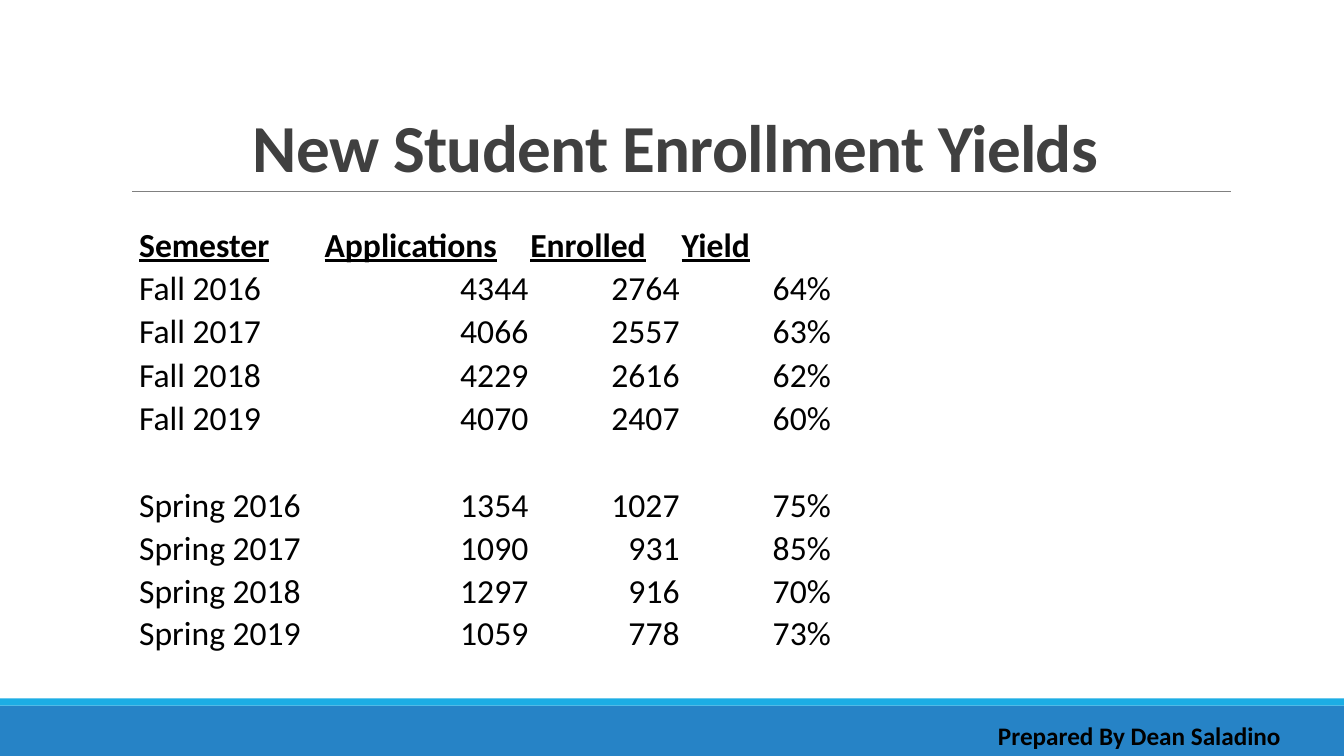
from pptx import Presentation
from pptx.dml.color import RGBColor
from pptx.enum.shapes import MSO_CONNECTOR, MSO_SHAPE
from pptx.enum.text import MSO_ANCHOR, MSO_AUTO_SIZE, PP_ALIGN
from pptx.oxml.ns import qn
from pptx.util import Inches, Pt
from lxml.etree import SubElement

TITLE = "New Student Enrollment Yields"
CREDIT = "Prepared By Dean Saladino"
HEADER = ("Semester", "Applications", "Enrolled", "Yield")
FALL = [
    ("Fall 2016", "4344", "2764", "64%"),
    ("Fall 2017", "4066", "2557", "63%"),
    ("Fall 2018", "4229", "2616", "62%"),
    ("Fall 2019", "4070", "2407", "60%"),
]
SPRING = [
    ("Spring 2016", "1354", "1027", "75%"),
    ("Spring 2017", "1090", "931", "85%"),
    ("Spring 2018", "1297", "916", "70%"),
    ("Spring 2019", "1059", "778", "73%"),
]
ROWS = [HEADER, *FALL, (), *SPRING]
COLUMN_WIDTHS = (1.84, 2.04, 1.5, 1.5, 1.5, 1.5)
ROW_HEIGHT, LAST_ROW_HEIGHT = 0.43, 0.31
MERGED_ROWS = (0, len(FALL), len(ROWS) - 1)

BLUE = RGBColor(0x26, 0x83, 0xC6)
CYAN = RGBColor(0x1C, 0xAD, 0xE4)
GRAY = RGBColor(0x80, 0x80, 0x80)
DARK_GRAY = RGBColor(0x40, 0x40, 0x40)
BLACK = RGBColor(0, 0, 0)


def write_text(frame, text, size=24, color=BLACK, bold=False, underline=False,
               align=PP_ALIGN.LEFT):
    paragraph = frame.paragraphs[0]
    paragraph.alignment = align
    run = paragraph.add_run()
    run.text = text
    font = run.font
    font.name, font.size, font.bold, font.underline = "Calibri", Pt(size), bold, underline
    font.color.rgb = color
    return paragraph


def add_bar(slide, top, height, color):
    bar = slide.shapes.add_shape(MSO_SHAPE.RECTANGLE, 0, Inches(top), Inches(13.33), Inches(height))
    bar.shadow.inherit = False
    bar.fill.solid()
    bar.fill.fore_color.rgb = color
    bar.line.fill.background()


def add_title_rule(slide):
    rule = slide.shapes.add_connector(
        MSO_CONNECTOR.STRAIGHT, Inches(1.31), Inches(1.9), Inches(12.21), Inches(1.9))
    rule.line.color.rgb = GRAY
    rule.line.width = Pt(0.5)
    SubElement(rule._element.spPr, qn("a:effectLst"))


def format_title(title):
    title.left, title.top = Inches(1.2), Inches(0.31)
    title.width, title.height = Inches(11), Inches(1.59)
    frame = title.text_frame
    frame.vertical_anchor = MSO_ANCHOR.BOTTOM
    frame.auto_size = MSO_AUTO_SIZE.NONE
    paragraph = write_text(frame, TITLE, size=48, color=DARK_GRAY, bold=True, align=PP_ALIGN.CENTER)
    paragraph.line_spacing = 0.85
    paragraph.runs[0].font._element.set("spc", "-50")


def add_yield_table(slide):
    height = ROW_HEIGHT * (len(ROWS) - 1) + LAST_ROW_HEIGHT
    table = slide.shapes.add_table(
        len(ROWS), len(COLUMN_WIDTHS), Inches(1.37), Inches(2.21),
        Inches(sum(COLUMN_WIDTHS)), Inches(height)).table
    table.first_row = table.horz_banding = False
    for column, width in zip(table.columns, COLUMN_WIDTHS):
        column.width = Inches(width)
    for row in table.rows:
        row.height = Inches(ROW_HEIGHT)
    table.rows[len(ROWS) - 1].height = Inches(LAST_ROW_HEIGHT)

    for cell in table.iter_cells():
        cell.fill.background()
        cell.vertical_anchor = MSO_ANCHOR.BOTTOM
        cell.margin_left = cell.margin_right = cell.margin_top = Inches(0.01)
        cell.margin_bottom = 0
    for row_index, values in enumerate(ROWS):
        is_header = row_index == 0
        for column_index, value in enumerate(values):
            is_number = column_index > 0 and not is_header
            write_text(table.cell(row_index, column_index).text_frame, value,
                       bold=is_header, underline=is_header,
                       align=PP_ALIGN.RIGHT if is_number else PP_ALIGN.LEFT)
    for row_index in MERGED_ROWS:
        table.cell(row_index, 4).merge(table.cell(row_index, 5))


def add_credit(slide):
    box = slide.shapes.add_textbox(Inches(9.8), Inches(7.1), Inches(3.53), Inches(0.4))
    box.text_frame.word_wrap = True
    write_text(box.text_frame, CREDIT, size=18, bold=True)


def main():
    presentation = Presentation()
    presentation.slide_width, presentation.slide_height = Inches(13.33), Inches(7.5)
    slide = presentation.slides.add_slide(presentation.slide_layouts[5])
    add_bar(slide, 7, 0.5, BLUE)
    add_bar(slide, 6.93, 0.07, CYAN)
    add_title_rule(slide)
    format_title(slide.shapes.title)
    add_yield_table(slide)
    add_credit(slide)
    presentation.save("out.pptx")


if __name__ == "__main__":
    main()
